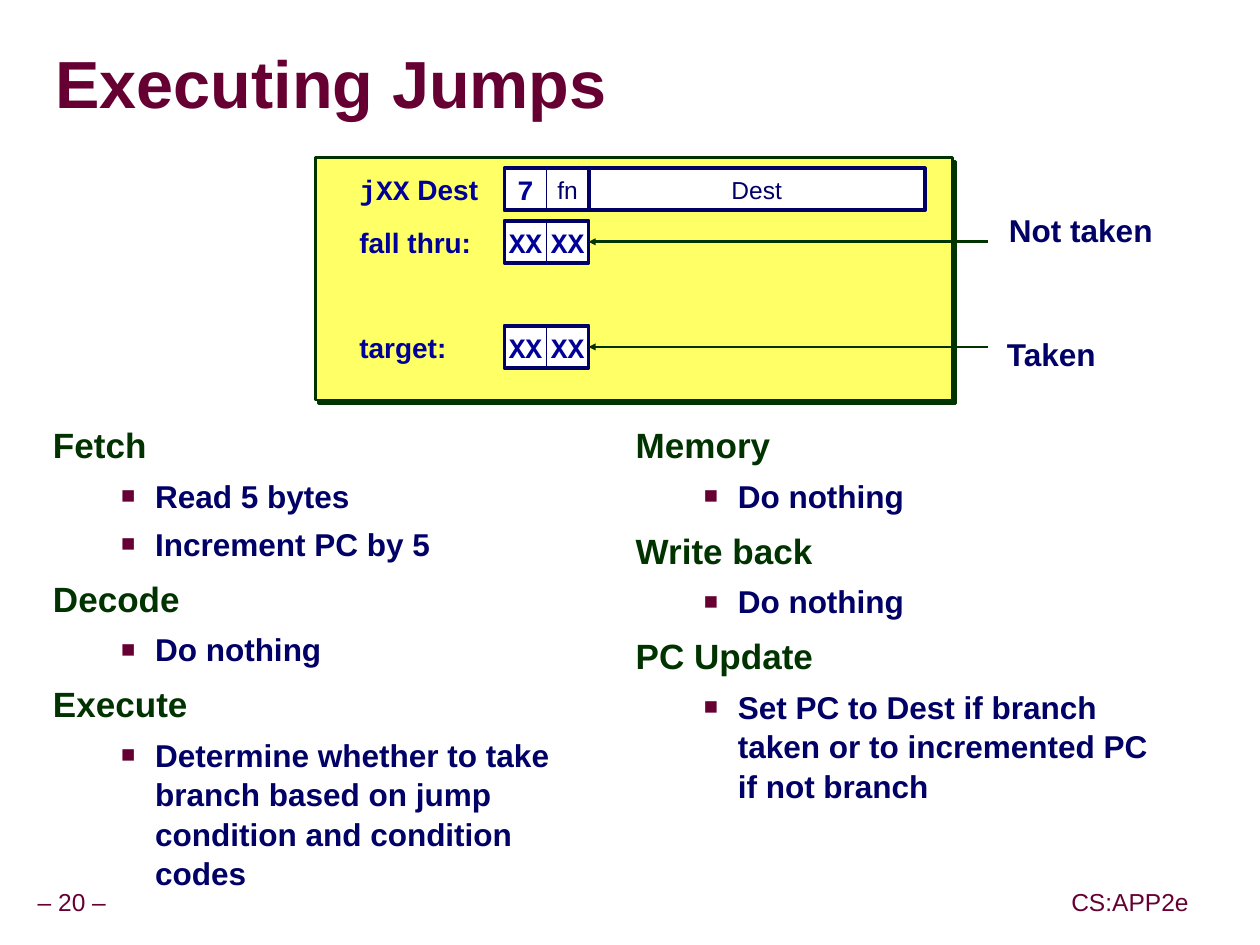
from lxml.etree import SubElement
from pptx import Presentation
from pptx.dml.color import RGBColor
from pptx.enum.shapes import MSO_CONNECTOR, MSO_SHAPE
from pptx.enum.text import MSO_ANCHOR as Anchor, MSO_AUTO_SIZE as AutoSize, PP_ALIGN as Align
from pptx.oxml.ns import qn
from pptx.util import Inches, Pt

COLORS = {
    "maroon": "660033", "green": "003300", "navy": "000066", "blue": "000099",
    "yellow": "FFFF66", "white": "FFFFFF", "gray": "969696",
}
UNIT = 1 / 12
ROW_HEIGHT = 4
LABEL_COLUMN, CODE_COLUMN, DEST_COLUMN, ARROW_COLUMN = 4.2, 18, 26, 64

FETCH_STAGES = [
    ("Fetch", ["Read 5 bytes", "Increment PC by 5"]),
    ("Decode", ["Do nothing"]),
    ("Execute", ["Determine whether to take branch based on jump condition and condition codes"]),
]
MEMORY_STAGES = [
    ("Memory", ["Do nothing"]),
    ("Write back", ["Do nothing"]),
    ("PC Update", ["Set PC to Dest if branch taken or to incremented PC if not branch"]),
]
JUMP_ROWS = [
    (1, [("jXX", "Courier New"), (" Dest", "Arial")], ["7", "fn"]),
    (6, [("fall thru:", "Arial")], ["XX", "XX"]),
    (16, [("target:", "Arial")], ["XX", "XX"]),
]


def rgb(name):
    """Return the named palette colour."""
    return RGBColor.from_string(COLORS[name])


def place(shape, box):
    """Move a shape to a box given in inches."""
    shape.left, shape.top, shape.width, shape.height = map(Inches, box)


def set_font(font, size, color, bold=False, name="Arial"):
    """Set the face, size, colour and weight of a font."""
    font.name, font.size, font.bold = name, Pt(size), bold
    font.color.rgb = rgb(color)


def set_frame(frame, inset=0, anchor=Anchor.MIDDLE, wrap=False):
    """Set the insets, anchor and wrapping of a text frame."""
    frame.auto_size, frame.word_wrap, frame.vertical_anchor = AutoSize.NONE, wrap, anchor
    frame.margin_left = frame.margin_right = Inches(inset)
    frame.margin_top = frame.margin_bottom = Inches(min(inset, 0.05))


def add_shadow(parent, color, distance):
    """Add a hard shadow towards the lower right."""
    effects = SubElement(parent, qn("a:effectLst"))
    shadow = SubElement(effects, qn("a:outerShdw"), dist=str(Pt(distance)),
                        dir="2700000", algn="ctr", rotWithShape="0")
    SubElement(shadow, qn("a:srgbClr"), val=COLORS[color])


def add_text(slide, box, pieces, size, color, bold=False, align=Align.LEFT):
    """Add a text box whose pieces are pairs of text and font name."""
    shape = slide.shapes.add_textbox(*map(Inches, box))
    set_frame(shape.text_frame)
    para = shape.text_frame.paragraphs[0]
    para.alignment = align
    set_font(para.font, size, color, bold)
    for text, name in pieces:
        span = para.add_run()
        span.text = text
        span.font.name = name


def add_cell(slide, box, weight, text="", fill="white", line="navy"):
    """Add an outlined rectangle, with centred text if given."""
    shape = slide.shapes.add_shape(MSO_SHAPE.RECTANGLE, *map(Inches, box))
    shape.shadow.inherit = False
    if fill:
        shape.fill.solid()
        shape.fill.fore_color.rgb = rgb(fill)
    else:
        shape.fill.background()
    shape.line.color.rgb, shape.line.width = rgb(line), Pt(weight)
    if text:
        set_frame(shape.text_frame)
        para = shape.text_frame.paragraphs[0]
        para.text, para.alignment = text, Align.CENTER
        if text in ("7", "XX"):
            set_font(para.font, 16, "blue", True, "Courier New")
        else:
            set_font(para.font, 14, "navy")
    return shape


def add_arrow(slide, start, end):
    """Add a green line with an arrowhead at its end."""
    arrow = slide.shapes.add_connector(MSO_CONNECTOR.STRAIGHT, *map(Inches, start + end))
    arrow.line.color.rgb, arrow.line.width = rgb("green"), Pt(1.5)
    properties = arrow._element.spPr
    SubElement(properties.find(qn("a:ln")), qn("a:tailEnd"), type="triangle", w="sm", len="sm")
    SubElement(properties, qn("a:effectLst"))


def add_title(slide, box):
    """Fill the title placeholder."""
    title = slide.shapes.title
    place(title, box)
    set_frame(title.text_frame, wrap=True)
    para = title.text_frame.paragraphs[0]
    para.alignment, para.line_spacing = Align.LEFT, 0.87
    span = para.add_run()
    span.text = "Executing Jumps"
    span.font.color.rgb = rgb("maroon")
    add_shadow(span._r.get_or_add_rPr(), "gray", 3)
    set_font(span.font, 38, "maroon", True)


def add_stages(body, box, stages):
    """Fill a body placeholder with stage headings and bulleted steps."""
    place(body, box)
    frame = body.text_frame
    set_frame(frame, 0.1, Anchor.TOP, True)
    lines = [(level, text) for heading, steps in stages
             for level, text in [(0, heading)] + [(1, step) for step in steps]]
    for index, (level, text) in enumerate(lines):
        para = frame.add_paragraph() if index else frame.paragraphs[0]
        para.text, para.level, para.alignment = text, level, Align.LEFT
        para.line_spacing = 1.04 if level else 0.95
        para.space_before = Pt(5 if level else 10)
        properties = para._p.get_or_add_pPr()
        properties.set("marL", str(Inches(0.81 * level)))
        properties.set("indent", str(Inches(-0.27 * level)))
        if level:
            SubElement(SubElement(properties, qn("a:buClr")), qn("a:srgbClr"), val=COLORS["maroon"])
            SubElement(properties, qn("a:buSzPct"), val="75000")
            SubElement(properties, qn("a:buFont"), typeface="Arial")
            SubElement(properties, qn("a:buChar"), char="■")
        else:
            SubElement(properties, qn("a:buNone"))
        set_font(para.font, 18 if level else 20, "navy" if level else "green", True)


def add_jump_diagram(slide, box):
    """Draw the jump encoding and its two possible successors."""
    left, top, width, height = box

    def grid(column, row, columns, rows=ROW_HEIGHT):
        return left + column * UNIT, top + row * UNIT, columns * UNIT, rows * UNIT

    panel = add_cell(slide, box, 1.5, fill="yellow", line="green")
    properties = panel._element.spPr
    properties.remove(properties.find(qn("a:effectLst")))
    add_shadow(properties, "green", 2.8)
    for row, label, codes in JUMP_ROWS:
        add_text(slide, grid(LABEL_COLUMN, row, 13), label, 16, "blue", True)
        for index, code in enumerate(codes):
            add_cell(slide, grid(CODE_COLUMN + index * ROW_HEIGHT, row, ROW_HEIGHT), 0.5, code)
        add_cell(slide, grid(CODE_COLUMN, row, 2 * ROW_HEIGHT), 2.25, fill=None)
    add_cell(slide, grid(DEST_COLUMN, 1, 32), 2.25, "Dest")
    for row, note, column, note_row in ((6, "Not taken", 66, 4.9), (16, "Taken", 65.8, 16.7)):
        start, end = (grid(at, row + ROW_HEIGHT / 2, 0)[:2] for at in (ARROW_COLUMN, DEST_COLUMN))
        add_arrow(slide, start, end)
        add_text(slide, grid(column, note_row, 14), [(note, "Arial")], 18, "navy", True)


def add_footer(slide, box):
    """Add the page number and the course name at the two ends of a strip."""
    left, top, width, height = box
    for at, size, text in ((left, 0.66, "– 20 –"), (left + width - 1.04, 1.04, "CS:APP2e")):
        add_text(slide, (at, top, size, height), [(text, "Arial")], 14, "maroon", align=Align.CENTER)


def main():
    """Build and save the slide."""
    deck = Presentation()
    deck.slide_width, deck.slide_height = Inches(9.99), Inches(7.49)
    slide = deck.slides.add_slide(deck.slide_layouts[3])
    add_footer(slide, (0.24, 6.99, 9.24, 0.31))
    add_title(slide, (0.44, 0.27, 9.52, 0.85))
    for index, left, stages in ((1, 0.32, FETCH_STAGES), (2, 4.94, MEMORY_STAGES)):
        add_stages(slide.placeholders[index], (left, 3.33, 4.45, 3.7), stages)
    add_jump_diagram(slide, (2.5, 1.25, 5.05, 1.92))
    deck.save("out.pptx")


if __name__ == "__main__":
    main()
